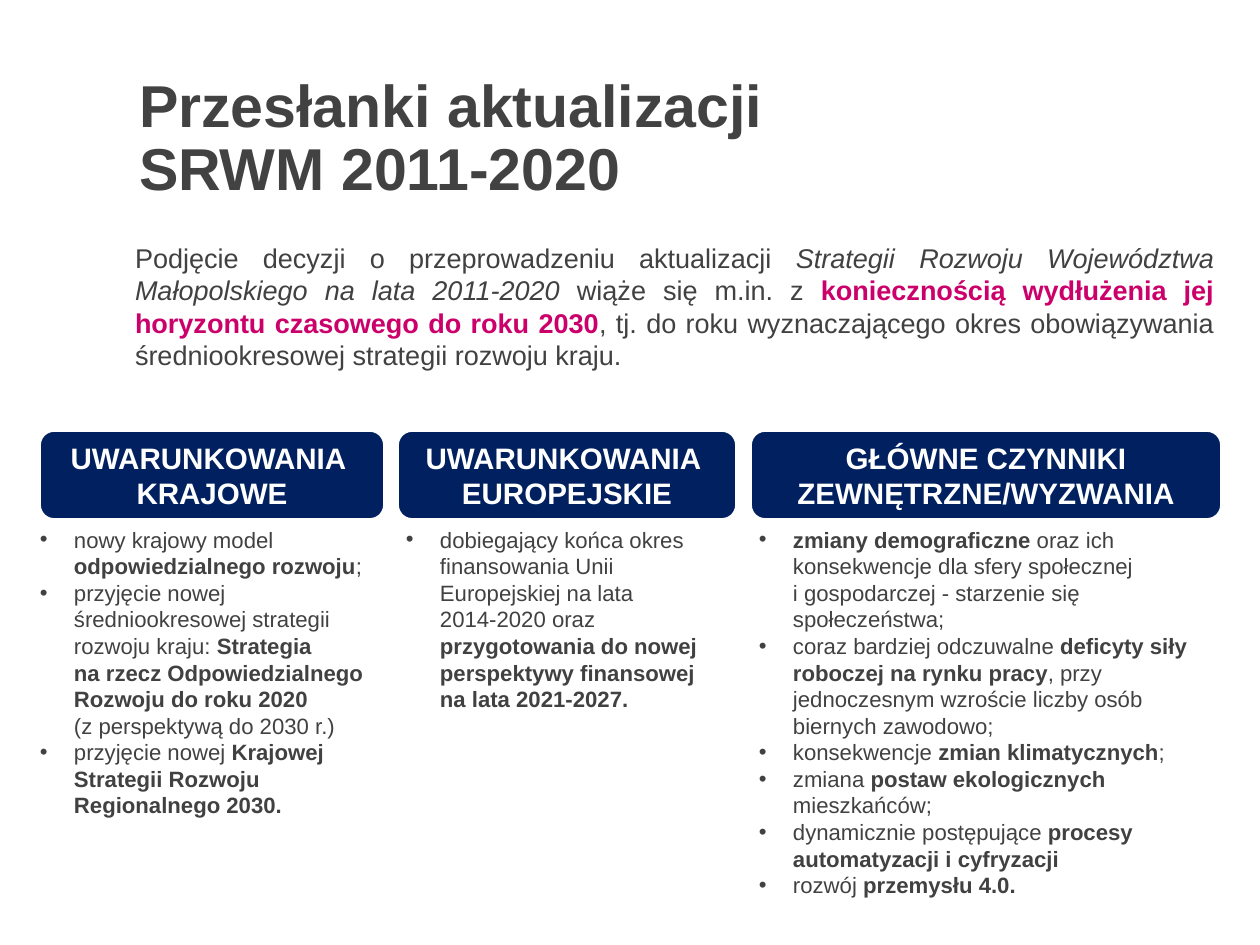
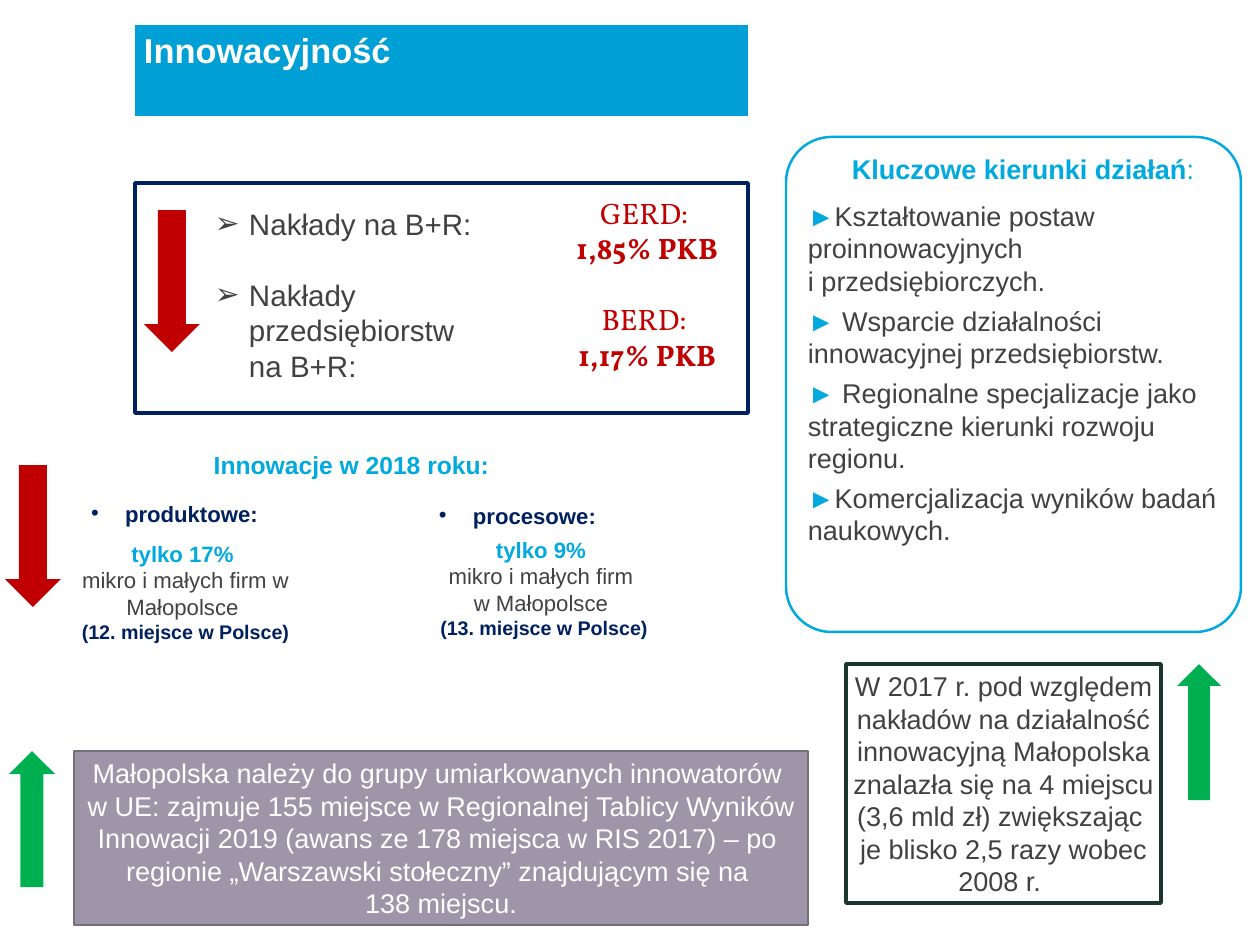
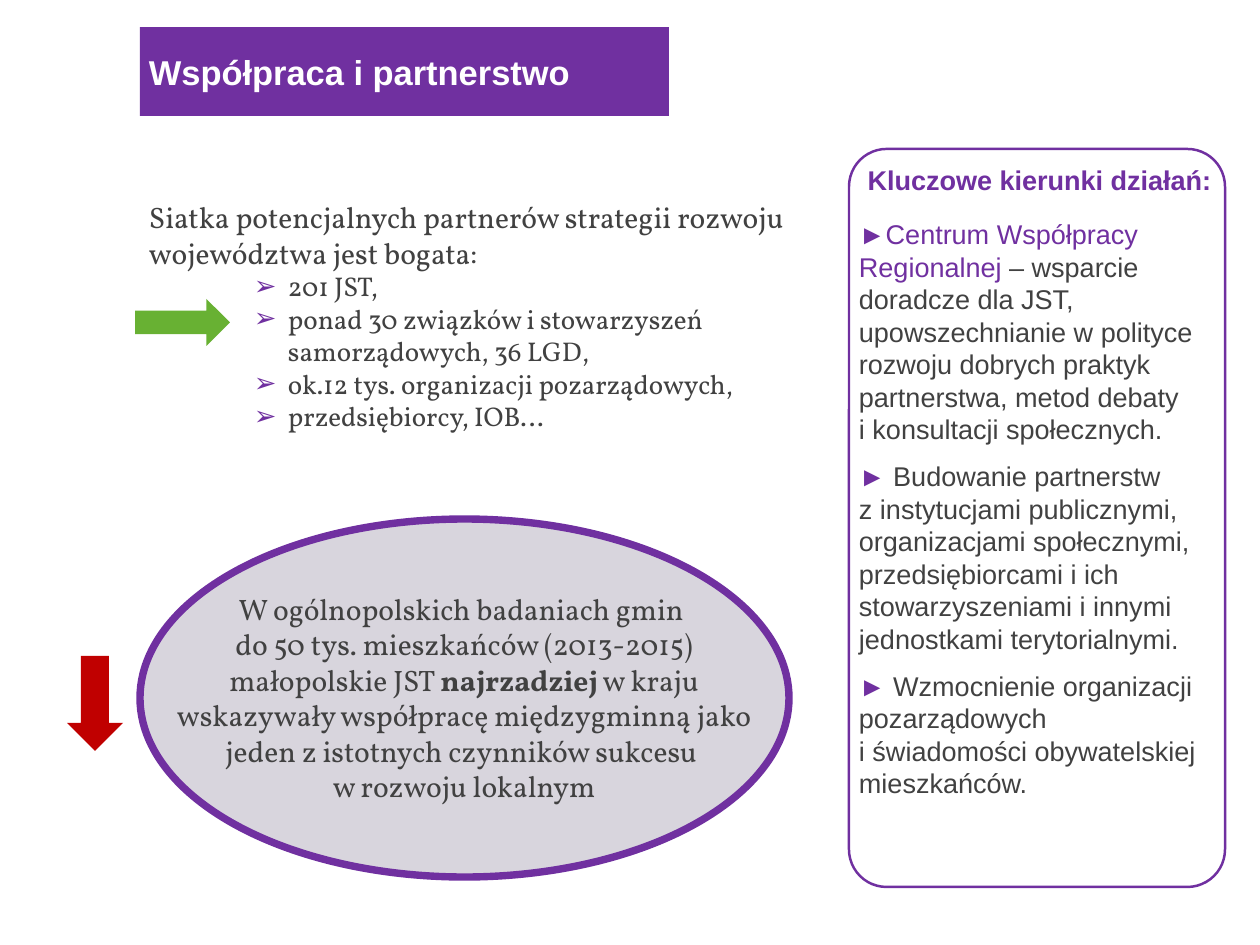
import dataclasses

import lxml.etree
import pptx
import pptx.dml.color
import pptx.enum.shapes
import pptx.enum.text
import pptx.oxml.ns
import pptx.util

EMU_PER_PX = 10320
SHAPE = pptx.enum.shapes.MSO_SHAPE
ALIGN = pptx.enum.text.PP_ALIGN
ANCHOR = pptx.enum.text.MSO_ANCHOR


@dataclasses.dataclass(frozen=True)
class Theme:
    sans: str = "Arial"
    serif: str = "Vollkorn"
    ink: str = "414141"
    title_ink: str = "414241"
    white: str = "FFFFFF"
    navy: str = "002060"
    magenta: str = "CC006A"
    band_blue: str = "009FD5"
    sky: str = "00A9DE"
    violet: str = "7030A0"
    mauve: str = "9E95A9"
    mauve_edge: str = "756E7D"
    mist: str = "D8D5DD"
    pine: str = "1B352F"
    fall: str = "C00000"
    rise: str = "00B050"
    leaf: str = "68B133"
    title: int = 48
    band: int = 28
    large: int = 24
    body: int = 22
    subhead: int = 20
    small: int = 18
    note: int = 16


THEME = Theme()


def px(length):
    return pptx.util.Emu(round(length * EMU_PER_PX))


def rgb(value):
    return pptx.dml.color.RGBColor.from_string(value)


def run(text, **font):
    return text, font


def bold(text, **font):
    return text, {"bold": True, **font}


def para(*runs, **layout):
    return [part if isinstance(part, tuple) else run(part) for part in runs], layout


def bullets(*items):
    return [para(*item) for item in items]


class Deck:
    def __init__(self, theme):
        self.theme = theme
        self.show = pptx.Presentation()
        self.show.slide_width, self.show.slide_height = px(1260), px(945)
        self.slide = None

    def new_slide(self):
        self.slide = self.show.slides.add_slide(self.show.slide_layouts[6])

    def shape(self, kind, box, fill=None, line=None, weight=2, corner=None):
        shape = self.slide.shapes.add_shape(kind, *map(px, box))
        shape.shadow.inherit = False
        if corner is not None:
            shape.adjustments[0] = corner
        if fill:
            shape.fill.solid()
            shape.fill.fore_color.rgb = rgb(fill)
        else:
            shape.fill.background()
        if line:
            shape.line.color.rgb = rgb(line)
            shape.line.width = pptx.util.Pt(weight)
        else:
            shape.line.fill.background()
        return shape

    def text(self, box, paragraphs, **style):
        self.set_text(self.slide.shapes.add_textbox(*map(px, box)), paragraphs, **style)

    def set_text(self, holder, paragraphs, size, color=None, name=None, bold=False,
                 inset=(9, 4), anchor=ANCHOR.TOP, wrap=True, **layout):
        across, down = map(px, inset)
        frame = holder.text_frame
        frame_format = {
            "margin_left": across, "margin_right": across,
            "margin_top": down, "margin_bottom": down,
            "vertical_anchor": anchor, "word_wrap": wrap,
        }
        for attribute, value in frame_format.items():
            setattr(frame, attribute, value)
        base = {"size": size, "color": color or self.theme.ink,
                "name": name or self.theme.sans, "bold": bold}
        for index, (runs, own_layout) in enumerate(paragraphs):
            paragraph = frame.add_paragraph() if index else frame.paragraphs[0]
            self.arrange(paragraph, {"alignment": ALIGN.LEFT, **layout, **own_layout})
            for words, font in runs:
                self.add_words(paragraph, words, {**base, **font})

    def arrange(self, paragraph, layout):
        settings = dict(layout)
        mark = settings.pop("mark", None)
        mark_color = settings.pop("mark_color", None)
        indent = settings.pop("indent", 34)
        if mark:
            properties = paragraph._p.get_or_add_pPr()
            properties.set("marL", str(px(indent)))
            properties.set("indent", str(-px(34)))
            qn = pptx.oxml.ns.qn
            if mark_color:
                holder = lxml.etree.SubElement(properties, qn("a:buClr"))
                lxml.etree.SubElement(holder, qn("a:srgbClr")).set("val", mark_color)
            lxml.etree.SubElement(properties, qn("a:buFont")).set("typeface", self.theme.sans)
            lxml.etree.SubElement(properties, qn("a:buChar")).set("char", mark)
        for attribute, value in settings.items():
            if attribute.startswith("space"):
                value = pptx.util.Pt(value)
            setattr(paragraph, attribute, value)

    def add_words(self, paragraph, words, font):
        for index, line in enumerate(words.split("\n")):
            if index:
                paragraph.add_line_break()
            if not line:
                continue
            piece = paragraph.add_run()
            piece.text = line
            for attribute, value in font.items():
                if attribute == "color":
                    piece.font.color.rgb = rgb(value)
                else:
                    setattr(piece.font, attribute,
                            pptx.util.Pt(value) if attribute == "size" else value)

    def band(self, box, words, fill, anchor):
        self.set_text(self.shape(SHAPE.RECTANGLE, box, fill), [para(words)],
                      self.theme.band, self.theme.white, bold=True, anchor=anchor)

    def column(self, header_box, heading, list_box, items):
        header = self.shape(SHAPE.ROUNDED_RECTANGLE, header_box,
                            self.theme.navy, self.theme.white, 3)
        self.set_text(header, [para(heading)], self.theme.large, self.theme.white, bold=True,
                      inset=(5, 5), anchor=ANCHOR.MIDDLE, alignment=ALIGN.CENTER)
        self.text(list_box, bullets(*items), size=self.theme.small, inset=(5, 5), mark="•")

    def directions(self, panel_box, text_box, heading, accent, gap, actions):
        self.shape(SHAPE.ROUNDED_RECTANGLE, panel_box, line=accent, corner=0.1)
        top = para(*heading, alignment=ALIGN.CENTER, space_after=6)
        rest = [para(run(lead, color=accent), words, space_before=gap)
                for lead, words in actions]
        self.text(text_box, [top] + rest, size=self.theme.body, inset=(5, 4))

    def boxed(self, box, paragraphs, line, weight, fill=None, color=None):
        self.set_text(self.shape(SHAPE.RECTANGLE, box, fill, line, weight), paragraphs,
                      self.theme.body, color, inset=(5, 5), anchor=ANCHOR.MIDDLE,
                      alignment=ALIGN.CENTER)

    def innovation(self, label_box, label, result_box, share, firms, rank):
        theme = self.theme
        self.text(label_box, [para(label)], size=theme.small, color=theme.navy, bold=True,
                  alignment=ALIGN.CENTER, mark="•")
        self.text(result_box, [
            para(bold(share, color=theme.sky)),
            para(firms),
            para(bold(rank, size=theme.note, color=theme.navy)),
        ], size=theme.small, alignment=ALIGN.CENTER)


def build_premises(deck):
    theme = deck.theme
    deck.new_slide()
    deck.text((130, 72, 1006, 234), [para("Przesłanki aktualizacji \nSRWM 2011-2020")],
              size=theme.title, color=theme.title_ink, bold=True, line_spacing=0.9)
    deck.text((126, 237, 1097, 140), [para(
        "Podjęcie decyzji o przeprowadzeniu aktualizacji ",
        run("Strategii Rozwoju Województwa Małopolskiego na lata 2011-2020", italic=True),
        " wiąże się m.in. z ",
        bold("koniecznością wydłużenia jej horyzontu czasowego do roku 2030",
             color=theme.magenta),
        ", tj. do roku wyznaczającego okres obowiązywania "
        "średniookresowej strategii rozwoju kraju.",
    )], size=theme.body, alignment=ALIGN.JUSTIFY)
    columns = [
        (39, 346, "UWARUNKOWANIA \nKRAJOWE", (35, 521, 350, 305), [
            ["nowy krajowy model \n", bold("odpowiedzialnego rozwoju"), ";"],
            ["przyjęcie nowej \nśredniookresowej strategii \nrozwoju kraju: ",
             bold("Strategia \nna rzecz Odpowiedzialnego \nRozwoju do roku 2020 \n"),
             "(z perspektywą do 2030 r.)"],
            ["przyjęcie nowej ",
             bold("Krajowej\nStrategii Rozwoju \nRegionalnego 2030.")],
        ]),
        (397, 340, "UWARUNKOWANIA \nEUROPEJSKIE", (401, 521, 336, 198), [
            ["dobiegający końca okres \nfinansowania Unii \n"
             "Europejskiej na lata \n2014-2020 oraz \n",
             bold("przygotowania do nowej\nperspektywy finansowej \nna lata 2021-2027.")],
        ]),
        (750, 472, "GŁÓWNE CZYNNIKI\nZEWNĘTRZNE/WYZWANIA", (754, 521, 462, 385), [
            [bold("zmiany demograficzne "),
             "oraz ich konsekwencje dla sfery społecznej \n"
             "i gospodarczej - starzenie się społeczeństwa;"],
            ["coraz bardziej odczuwalne ", bold("deficyty siły roboczej na rynku pracy"),
             ", przy jednoczesnym wzroście liczby osób biernych zawodowo;"],
            ["konsekwencje ", bold("zmian klimatycznych"), ";"],
            ["zmiana ", bold("postaw ekologicznych "), "mieszkańców;"],
            ["dynamicznie postępujące ", bold("procesy automatyzacji i cyfryzacji")],
            ["rozwój ", bold("przemysłu 4.0.")],
        ]),
    ]
    for left, width, heading, list_box, items in columns:
        deck.column((left, 430, width, 90), heading, list_box, items)


def build_innovation(deck):
    theme = deck.theme
    deck.new_slide()
    deck.shape(SHAPE.RECTANGLE, (135, 183, 613, 230), line=theme.navy, weight=3)
    deck.band((135, 25, 613, 91), "Innowacyjność", theme.band_blue, ANCHOR.TOP)
    deck.text((143, 446, 417, 39), [para("Innowacje w 2018 roku:")], size=theme.subhead,
              color=theme.sky, bold=True, alignment=ALIGN.CENTER)
    deck.innovation((56, 496, 237, 35), "produktowe:", (69, 536, 233, 113),
                    "tylko 17% ", "mikro i małych firm w Małopolsce ",
                    "(12. miejsce w Polsce)")
    deck.innovation((399, 498, 237, 35), "procesowe:", (415, 532, 258, 116),
                    "tylko 9% ", "mikro i małych firm \nw Małopolsce ",
                    "(13. miejsce w Polsce)")
    deck.directions(
        (786, 137, 455, 495), (803, 148, 440, 449),
        [bold("Kluczowe kierunki działań", color=theme.sky), run(":", color=theme.sky)],
        theme.sky, 6, [
            ("►", "Kształtowanie postaw proinnowacyjnych \ni przedsiębiorczych."),
            ("► ", "Wsparcie działalności innowacyjnej przedsiębiorstw."),
            ("► ", "Regionalne specjalizacje jako strategiczne kierunki rozwoju regionu."),
            ("►", "Komercjalizacja wyników badań naukowych."),
        ])
    deck.text((210, 200, 409, 189), [
        para("Nakłady na B+R:"),
        para("Nakłady \nprzedsiębiorstw\nna B+R:", space_before=29),
    ], size=theme.large, inset=(5, 5), anchor=ANCHOR.MIDDLE, mark="➢")
    deck.text((564, 189, 166, 189), [
        para("GERD: "),
        para(bold("1,85% PKB")),
        para("BERD: ", space_before=29),
        para(bold("1,17% PKB")),
    ], size=theme.large, color=theme.fall, name=theme.serif, inset=(5, 5),
        anchor=ANCHOR.MIDDLE, wrap=False, alignment=ALIGN.CENTER)
    deck.boxed((74, 751, 734, 174), [
        para("Małopolska należy do grupy umiarkowanych innowatorów "),
        para("w UE: zajmuje 155 miejsce w Regionalnej Tablicy Wyników Innowacji 2019 "
             "(awans ze 178 miejsca w RIS 2017) – po "),
        para("regionie „Warszawski stołeczny” znajdującym się na "),
        para("138 miejscu."),
    ], theme.mauve_edge, 2, theme.mauve, theme.white)
    deck.boxed((846, 664, 315, 239), [
        para("W 2017 r. pod względem nakładów na działalność innowacyjną Małopolska "
             "znalazła się na 4 miejscu (3,6 mld zł) zwiększając "),
        para("je blisko 2,5 razy wobec 2008 r. "),
    ], theme.pine, 3)
    for box in ((144, 210, 56, 142), (5, 465, 56, 142)):
        deck.shape(SHAPE.DOWN_ARROW, box, theme.fall)
    for box in ((1177, 664, 44, 136), (9, 751, 46, 136)):
        deck.shape(SHAPE.UP_ARROW, box, theme.rise)


def build_partnership(deck):
    theme = deck.theme
    deck.new_slide()
    deck.band((140, 27, 529, 89), "Współpraca i partnerstwo", theme.violet, ANCHOR.MIDDLE)
    deck.directions(
        (849, 149, 376, 738), (854, 159, 371, 736),
        [bold("Kluczowe kierunki działań:", color=theme.violet)], theme.violet, 12, [
            ("►Centrum Współpracy Regionalnej ",
             "– wsparcie doradcze dla JST, upowszechnianie w polityce rozwoju dobrych "
             "praktyk partnerstwa, metod debaty \ni konsultacji społecznych."),
            ("► ", "Budowanie partnerstw \nz instytucjami publicznymi, organizacjami "
             "społecznymi, przedsiębiorcami i ich stowarzyszeniami i innymi "
             "jednostkami terytorialnymi."),
            ("► ", "Wzmocnienie organizacji pozarządowych \n"
             "i świadomości obywatelskiej mieszkańców."),
        ])
    deck.shape(SHAPE.OVAL, (140, 519, 649, 358), theme.mist, theme.violet, 6)
    deck.text((162, 587, 604, 223), [
        para("W ogólnopolskich badaniach gmin "),
        para("do 50 tys. mieszkańców (2013-2015) małopolskie JST ", bold("najrzadziej"),
             " w kraju wskazywały współpracę międzygminną jako jeden z istotnych "
             "czynników sukcesu \nw rozwoju lokalnym"),
    ], size=theme.large, name=theme.serif, alignment=ALIGN.CENTER)
    partners = [
        "201 JST,",
        "ponad 30 związków i stowarzyszeń samorządowych, 36 LGD,",
        "ok.12 tys. organizacji pozarządowych,",
        "przedsiębiorcy, IOB…",
    ]
    deck.text((140, 195, 662, 245), [
        para("Siatka potencjalnych partnerów strategii rozwoju województwa jest bogata:"),
        *[para(run(partner, size=theme.body), mark="➢", mark_color=theme.violet, indent=139)
          for partner in partners],
    ], size=theme.large, name=theme.serif)
    deck.shape(SHAPE.RIGHT_ARROW, (135, 299, 95, 47), theme.leaf)
    deck.shape(SHAPE.DOWN_ARROW, (67, 656, 56, 95), theme.fall)


def main():
    deck = Deck(THEME)
    for build in (build_premises, build_innovation, build_partnership):
        build(deck)
    deck.show.save("out.pptx")


if __name__ == "__main__":
    main()
